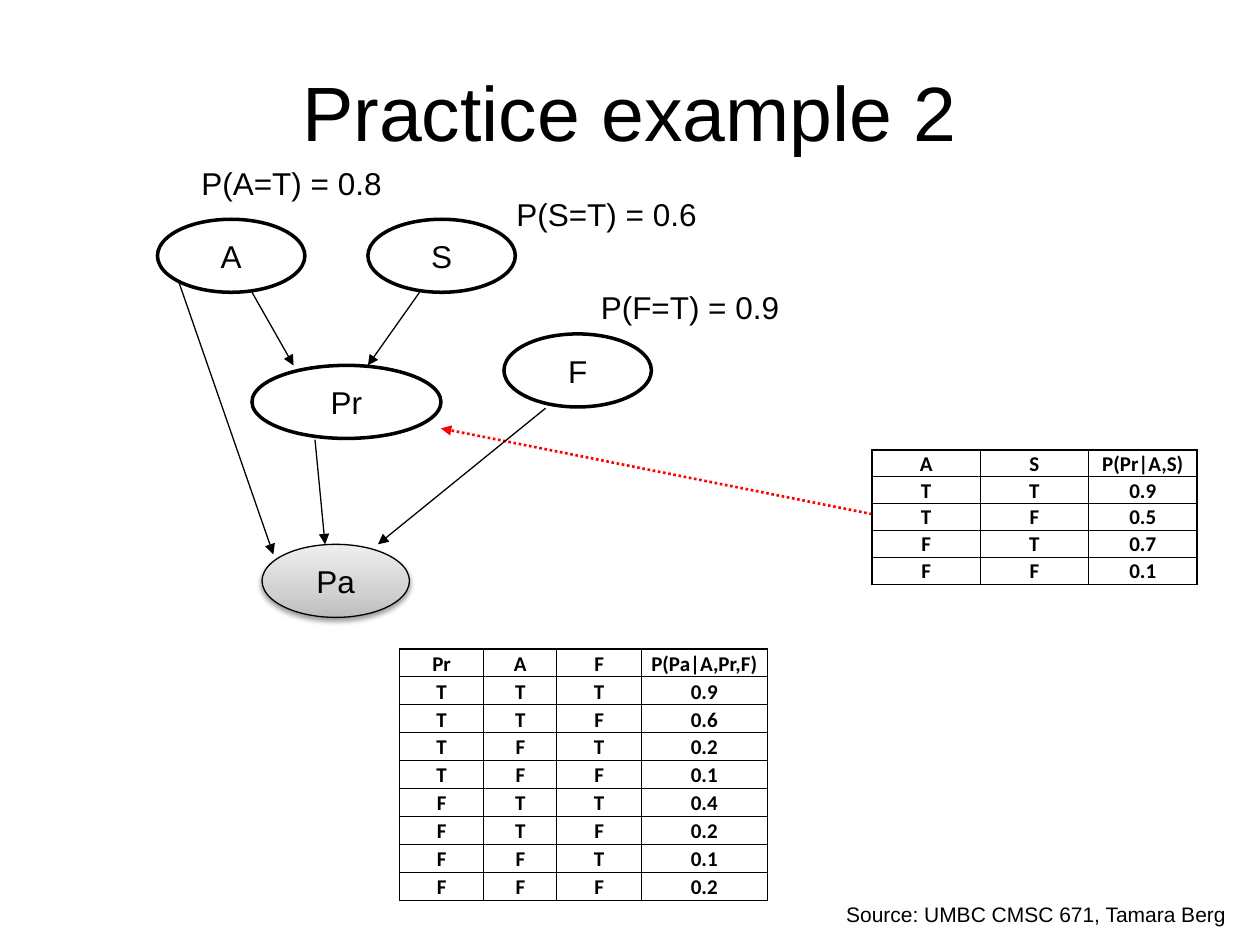
import copy
import itertools

import pptx
import pptx.dml.color
import pptx.enum.dml
import pptx.enum.shapes
import pptx.enum.text
import pptx.oxml
import pptx.oxml.ns
import pptx.util
from pptx.util import Inches

COLORS = {"ink": "000000", "paper": "FFFFFF", "pointer": "FF0000",
          "shade_dark": "BDBDBD", "shade_mid": "D1D1D1", "shade_light": "EEEEEE"}
ALIGN = pptx.enum.text.PP_ALIGN
ANCHOR = pptx.enum.text.MSO_ANCHOR
NAMESPACE = pptx.oxml.ns.nsdecls("a")
NODE_HEIGHT = 0.58

# label: left, top, width
NODES = {"A": (1.25, 1.74, 1.17), "S": (2.92, 1.74, 1.17),
         "Pr": (2, 2.9, 1.5), "F": (4, 2.65, 1.17), "Pa": (2.08, 4.32, 1.17)}
EDGES = [((2, 2.32), (2.33, 2.9)), ((3.33, 2.32), (2.92, 2.9)),
         ((4.33, 3.24), (3, 4.32)), ((2.5, 3.49), (2.58, 4.32)),
         ((1.42, 2.24), (2.17, 4.4))]
PRIORS = [("P(A=T) = 0.8", (1.5, 1.25, 1.65, 0.4)),
          ("P(S=T) = 0.6", (4, 1.5, 1.65, 0.4)),
          ("P(F=T) = 0.9", (4.67, 2.24, 1.63, 0.4))]


def rgb(name):
    return pptx.dml.color.RGBColor.from_string(COLORS[name])


def apply_formats(target, formats):
    for name, value in formats.items():
        setattr(target, name, value)


def write_text(frame, text, size, align, font="Arial", bold=False):
    paragraph = frame.paragraphs[0]
    paragraph.alignment = align
    run = paragraph.add_run()
    run.text = text
    apply_formats(run.font, {"name": font, "size": pptx.util.Pt(size), "bold": bold})
    run.font.color.rgb = rgb("ink")


def add_text(slide, text, box, size, align=ALIGN.LEFT, **frame_formats):
    frame = slide.shapes.add_textbox(*map(Inches, box)).text_frame
    apply_formats(frame, frame_formats)
    write_text(frame, text, size, align)


def add_node(slide, label, left, top, width):
    shape = slide.shapes.add_shape(
        pptx.enum.shapes.MSO_SHAPE.OVAL,
        *map(Inches, (left, top, width, NODE_HEIGHT)))
    shape.shadow.inherit = False
    shape.fill.solid()
    shape.fill.fore_color.rgb = rgb("paper")
    shape.line.color.rgb = rgb("ink")
    shape.line.width = pptx.util.Pt(2)
    apply_formats(shape.text_frame, {"word_wrap": False, "vertical_anchor": ANCHOR.MIDDLE})
    write_text(shape.text_frame, label, 18, ALIGN.CENTER)
    return shape


def shade_node(shape):
    """Give a node a three-stop gradient, a thin outline and a soft shadow."""
    shape.line.width = pptx.util.Pt(0.75)
    shape.fill.gradient()
    shape.fill.gradient_angle = 90
    properties = shape._element.spPr
    stop_list = properties.find(".//" + pptx.oxml.ns.qn("a:gsLst"))
    stop_list.insert(1, copy.deepcopy(stop_list[0]))
    stops = [("shade_dark", 0), ("shade_mid", 0.35), ("shade_light", 1)]
    for stop, (color, position) in zip(shape.fill.gradient_stops, stops):
        stop.color.rgb = rgb(color)
        stop.position = position
    effects = properties.find(pptx.oxml.ns.qn("a:effectLst"))
    effects.append(pptx.oxml.parse_xml(
        f'<a:outerShdw {NAMESPACE} blurRad="{pptx.util.Pt(3.1)}" '
        f'dist="{pptx.util.Pt(1.6)}" dir="5400000" rotWithShape="0">'
        f'<a:srgbClr val="{COLORS["ink"]}"><a:alpha val="38000"/></a:srgbClr>'
        '</a:outerShdw>'))


def add_arrow(slide, start, end, color="ink", width=0.75, dash=None):
    connector = slide.shapes.add_connector(
        pptx.enum.shapes.MSO_CONNECTOR.STRAIGHT, *map(Inches, (*start, *end)))
    connector.line.color.rgb = rgb(color)
    apply_formats(connector.line, {"width": pptx.util.Pt(width), "dash_style": dash})
    connector.line._get_or_add_ln().append(
        pptx.oxml.parse_xml(f'<a:tailEnd {NAMESPACE} type="triangle"/>'))
    connector._element.spPr.append(pptx.oxml.parse_xml(f"<a:effectLst {NAMESPACE}/>"))


def add_border(cell, side, width):
    cell._tc.get_or_add_tcPr().append(pptx.oxml.parse_xml(
        f'<a:ln{side} {NAMESPACE} w="{pptx.util.Pt(width)}"><a:solidFill>'
        f'<a:srgbClr val="{COLORS["ink"]}"/></a:solidFill></a:ln{side}>'))


def add_probability_table(slide, left, top, widths, row_height, header, values):
    """List every T/F combination of the parents with its probability."""
    combinations = itertools.product("TF", repeat=len(header) - 1)
    rows = [header] + [(*states, value) for states, value in zip(combinations, values)]
    table = slide.shapes.add_table(
        len(rows), len(header), Inches(left), Inches(top),
        Inches(sum(widths)), Inches(row_height * len(rows))).table
    apply_formats(table, {"first_row": False, "horz_banding": False})
    for column, width in zip(table.columns, widths):
        column.width = Inches(width)
    for row_index, texts in enumerate(rows):
        table.rows[row_index].height = Inches(row_height)
        for column_index, text in enumerate(texts):
            cell = table.cell(row_index, column_index)
            apply_formats(cell, {
                "margin_left": Inches(0.01), "margin_right": Inches(0.01),
                "margin_top": Inches(0.01), "margin_bottom": 0,
                "vertical_anchor": ANCHOR.BOTTOM})
            outer_sides = {"L": column_index == 0, "R": column_index == len(header) - 1,
                           "T": row_index == 0, "B": row_index == len(rows) - 1}
            for side, is_outer in outer_sides.items():
                add_border(cell, side, 1 if is_outer else 0.5)
            cell.fill.background()
            write_text(cell.text_frame, text, 12, ALIGN.CENTER, "Calibri", True)


def main():
    presentation = pptx.Presentation()
    presentation.slide_width = Inches(10)
    presentation.slide_height = Inches(7.5)
    slide = presentation.slides.add_slide(presentation.slide_layouts[6])
    grow = pptx.enum.text.MSO_AUTO_SIZE.SHAPE_TO_FIT_TEXT

    add_text(slide, "Practice example 2", (0.75, 0.25, 8.5, 1.25), 44, ALIGN.CENTER,
             word_wrap=True, vertical_anchor=ANCHOR.MIDDLE)
    add_arrow(slide, (6.92, 4.08), (3.5, 3.4), "pointer", 1.5,
              pptx.enum.dml.MSO_LINE.ROUND_DOT)
    add_text(slide, "Source: UMBC CMSC 671, Tamara Berg", (6.08, 7.11, 3.75, 0.3), 12,
             ALIGN.RIGHT, word_wrap=True, auto_size=grow)
    add_probability_table(slide, 6.92, 3.57, [0.86] * 3, 0.214,
                          ("A", "S", "P(Pr|A,S)"), ("0.9", "0.5", "0.7", "0.1"))
    nodes = {label: add_node(slide, label, *place) for label, place in NODES.items()}
    shade_node(nodes["Pa"])
    for start, end in EDGES:
        add_arrow(slide, start, end)
    for text, box in PRIORS:
        add_text(slide, text, box, 18, word_wrap=False, auto_size=grow)
    add_probability_table(slide, 3.17, 5.15, [0.67, 0.58, 0.67, 1], 0.222,
                          ("Pr", "A", "F", "P(Pa|A,Pr,F)"),
                          ("0.9", "0.6", "0.2", "0.1", "0.4", "0.2", "0.1", "0.2"))
    presentation.save("out.pptx")


if __name__ == "__main__":
    main()
